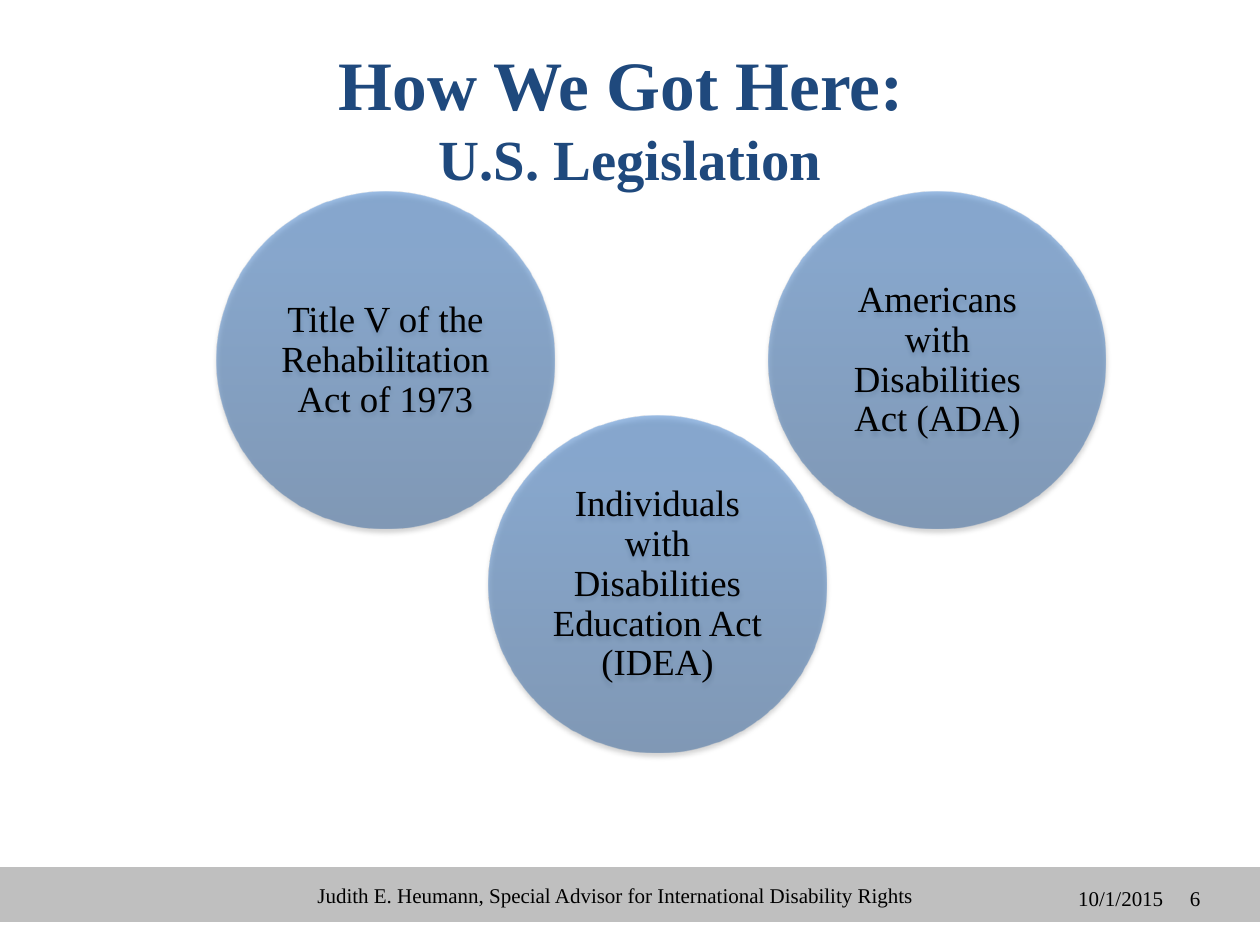
from lxml import etree
from pptx import Presentation
from pptx import util as u
from pptx.dml.color import RGBColor
from pptx.enum import shapes, text
from pptx.oxml import parse_xml
from pptx.oxml.ns import nsdecls, qn

EMU_PER_PX = 914400 / 126
COLORS = {"navy": "1F497D", "bar": "BFBFBF", "black": "000000",
          "low": "2F5F99", "mid": "3D7CC7", "high": "3A7CCB"}
FONT = "Times New Roman"
CENTER, LEFT = text.PP_ALIGN.CENTER, text.PP_ALIGN.LEFT


def px(n):
    return u.Emu(round(n * EMU_PER_PX))


class Deck:
    """Holds the style and the current slide."""

    def __init__(self, width, height):
        self.prs = Presentation()
        self.prs.slide_width, self.prs.slide_height = px(width), px(height)
        self.s = self.prs.slides.add_slide(self.prs.slide_layouts[5])

    def run(self, p, words, size, color="black", bold=False):
        r = p.add_run()
        r.text = words
        r.font.name, r.font.size, r.font.bold = FONT, u.Pt(size), bold
        r.font.color.rgb = RGBColor.from_string(COLORS[color])

    def frame(self, sp, align, inset=None):
        tf = sp.text_frame
        tf.word_wrap = True
        tf.vertical_anchor = text.MSO_ANCHOR.MIDDLE
        if inset is not None:
            tf.margin_left = tf.margin_right = px(inset)
            tf.margin_top = tf.margin_bottom = px(inset)
        p = tf.paragraphs[0]
        p.alignment = align
        return p

    def title(self, box, first, second):
        sp = self.s.shapes.title
        sp.left, sp.top, sp.width, sp.height = map(px, box)
        p = self.frame(sp, CENTER)
        self.run(p, first, 39.6, "navy", True)
        p.add_line_break()
        self.run(p, second, 32.4, "navy", True)

    def bar(self, box, color):
        sp = self.s.shapes.add_shape(shapes.MSO_SHAPE.RECTANGLE, *map(px, box))
        sp.shadow.inherit = False
        sp.fill.solid()
        sp.fill.fore_color.rgb = RGBColor.from_string(COLORS[color])
        sp.line.fill.background()

    def label(self, box, words, align=CENTER, tabs=()):
        sp = self.s.shapes.add_textbox(*map(px, box))
        p = self.frame(sp, align)
        if tabs:
            tab_list = etree.SubElement(p._p.get_or_add_pPr(), qn("a:tabLst"))
            for pos in tabs:
                etree.SubElement(tab_list, qn("a:tab"), pos=str(px(pos)), algn="r")
        self.run(p, words, 12)

    def circle(self, left, top, size, words):
        sp = self.s.shapes.add_shape(shapes.MSO_SHAPE.OVAL, px(left), px(top), px(size), px(size))
        sp.line.fill.background()
        # Half-transparent gradient, running from the bottom up
        stops = "".join(
            f'<a:gs pos="{pos * 1000}"><a:srgbClr val="{COLORS[name]}">'
            '<a:alpha val="50000"/></a:srgbClr></a:gs>'
            for pos, name in ((0, "low"), (80, "mid"), (100, "high")))
        sp._element.spPr.find(qn("a:prstGeom")).addnext(parse_xml(
            f'<a:gradFill rotWithShape="1" {nsdecls("a")}><a:gsLst>{stops}</a:gsLst>'
            '<a:lin ang="16200000" scaled="0"/></a:gradFill>'))
        # Soft shadow below
        sp._element.spPr.append(parse_xml(
            f'<a:effectLst {nsdecls("a")}><a:outerShdw blurRad="{u.Pt(3.1)}" '
            f'dist="{u.Pt(1.8)}" dir="5400000" rotWithShape="0">'
            f'<a:srgbClr val="{COLORS["black"]}"><a:alpha val="35000"/></a:srgbClr>'
            '</a:outerShdw></a:effectLst>'))
        p = self.frame(sp, CENTER, inset=11)
        p.line_spacing = 0.9
        self.run(p, words, 21)


def main():
    deck = Deck(1260, 945)

    # Footer
    deck.bar((0, 867, 1260, 55), "bar")
    deck.label((280, 870, 671, 50),
               "Judith E. Heumann, Special Advisor for International Disability Rights")
    deck.label((920, 873, 294, 50), "\t10/1/2015\t6", LEFT, tabs=(231, 268))

    # Title
    deck.title((63, 38, 1134, 157), "How We Got Here: ", "U.S. Legislation")

    # Laws
    upper, lower = 192, 416
    for left, top, law in (
            (217, upper, "Title V of the Rehabilitation Act of 1973"),
            (489, lower, "Individuals with Disabilities Education Act (IDEA)"),
            (769, upper, "Americans with Disabilities Act (ADA)")):
        deck.circle(left, top, 337, law)

    deck.prs.save("out.pptx")


if __name__ == "__main__":
    main()
